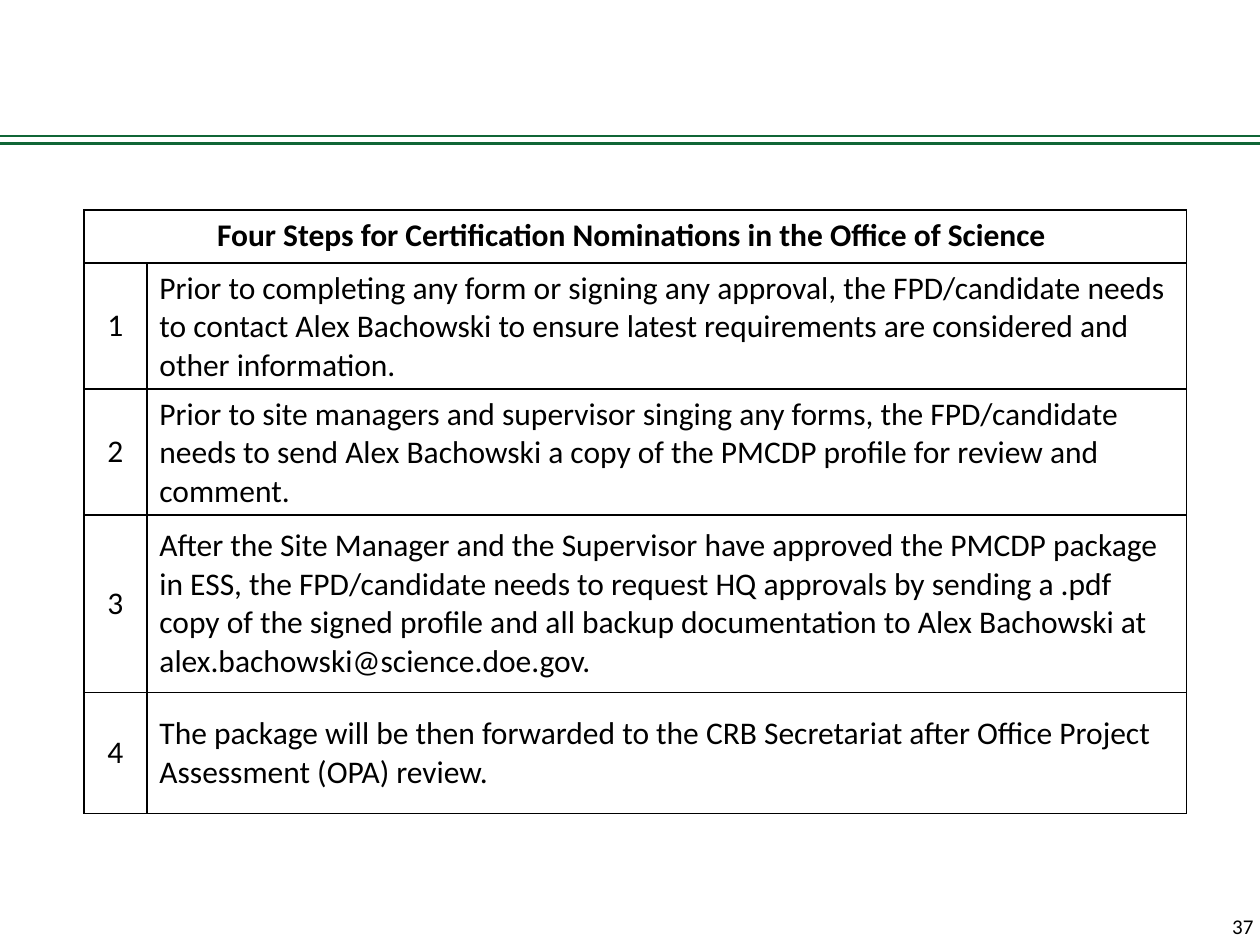
from lxml import etree
from pptx import Presentation
from pptx.dml.color import RGBColor
from pptx.enum.shapes import MSO_CONNECTOR as CONN
from pptx.enum.text import MSO_ANCHOR as ANCHOR, PP_ALIGN as ALIGN
from pptx.oxml.ns import qn
from pptx.util import Cm, Pt

BLACK, GREEN, WHITE = "000000", "106636", "FFFFFF"
TITLE = "Four Steps for Certification Nominations in the Office of Science "
STEPS = [
    "Prior to completing any form or signing any approval, the FPD/candidate needs "
    "to contact Alex Bachowski to ensure latest requirements are considered and "
    "other information.",
    "Prior to site managers and supervisor singing any forms, the FPD/candidate "
    "needs to send Alex Bachowski a copy of the PMCDP profile for review and comment.",
    "After the Site Manager and the Supervisor have approved the PMCDP package in "
    "ESS, the FPD/candidate needs to request HQ approvals by sending a .pdf copy of "
    "the signed profile and all backup documentation to Alex Bachowski at "
    "alex.bachowski@science.doe.gov.",
    "The package will be then forwarded to the CRB Secretariat after Office Project "
    "Assessment (OPA) review.",
]
COL_WIDTHS = [1.27, 20.96]
ROW_HEIGHTS = [1.07, 2.44, 2.44, 3.58, 2.44]


def color(value):
    return RGBColor.from_string(value)


def style_paragraph(p, size, bold=False):
    for r in p.runs:
        r.font.size = Pt(size)
        r.font.name = "Calibri"
        r.font.bold = bold
        r.font.color.rgb = color(BLACK)


def add_rule(slide, y):
    line = slide.shapes.add_connector(CONN.STRAIGHT, 0, Cm(y), Cm(25.4), Cm(y))
    line.line.color.rgb = color(GREEN)
    line.line.width = Pt(1.5)
    etree.SubElement(line._element.spPr, qn("a:effectLst"))


def add_page_number(slide, text):
    tf = slide.shapes.add_textbox(Cm(24.59), Cm(18.29), Cm(1.02), Cm(0.76)).text_frame
    tf.word_wrap = False
    tf.text = text
    style_paragraph(tf.paragraphs[0], 12)


def add_borders(cell):
    tc_pr = cell._tc.get_or_add_tcPr()
    for i, side in enumerate(("a:lnL", "a:lnR", "a:lnT", "a:lnB")):
        ln = etree.Element(qn(side), w=str(Pt(1)))
        fill = etree.SubElement(ln, qn("a:solidFill"))
        etree.SubElement(fill, qn("a:srgbClr"), val=BLACK)
        tc_pr.insert(i, ln)


def fill_cell(cell, text, align=ALIGN.LEFT, anchor=ANCHOR.MIDDLE, bold=False):
    cell.text_frame.text = text
    cell.vertical_anchor = anchor
    p = cell.text_frame.paragraphs[0]
    p.alignment = align
    style_paragraph(p, 18, bold)


def add_steps_table(slide):
    table = slide.shapes.add_table(
        len(ROW_HEIGHTS), len(COL_WIDTHS), Cm(1.69), Cm(4.23),
        Cm(sum(COL_WIDTHS)), Cm(sum(ROW_HEIGHTS))).table
    for col, width in zip(table.columns, COL_WIDTHS):
        col.width = Cm(width)
    for row, height in zip(table.rows, ROW_HEIGHTS):
        row.height = Cm(height)
    for cell in table.iter_cells():
        cell.fill.solid()
        cell.fill.fore_color.rgb = color(WHITE)
        add_borders(cell)
    table.cell(0, 0).merge(table.cell(0, 1))
    fill_cell(table.cell(0, 0), TITLE, ALIGN.CENTER, ANCHOR.TOP, True)
    for i, step in enumerate(STEPS, 1):
        fill_cell(table.cell(i, 0), str(i), ALIGN.CENTER)
        fill_cell(table.cell(i, 1), step)


def main():
    prs = Presentation()
    prs.slide_width, prs.slide_height = Cm(25.4), Cm(19.05)
    slide = prs.slides.add_slide(prs.slide_layouts[6])
    for y in (2.74, 2.89):
        add_rule(slide, y)
    add_page_number(slide, "37")
    add_steps_table(slide)
    prs.save("out.pptx")


if __name__ == "__main__":
    main()
